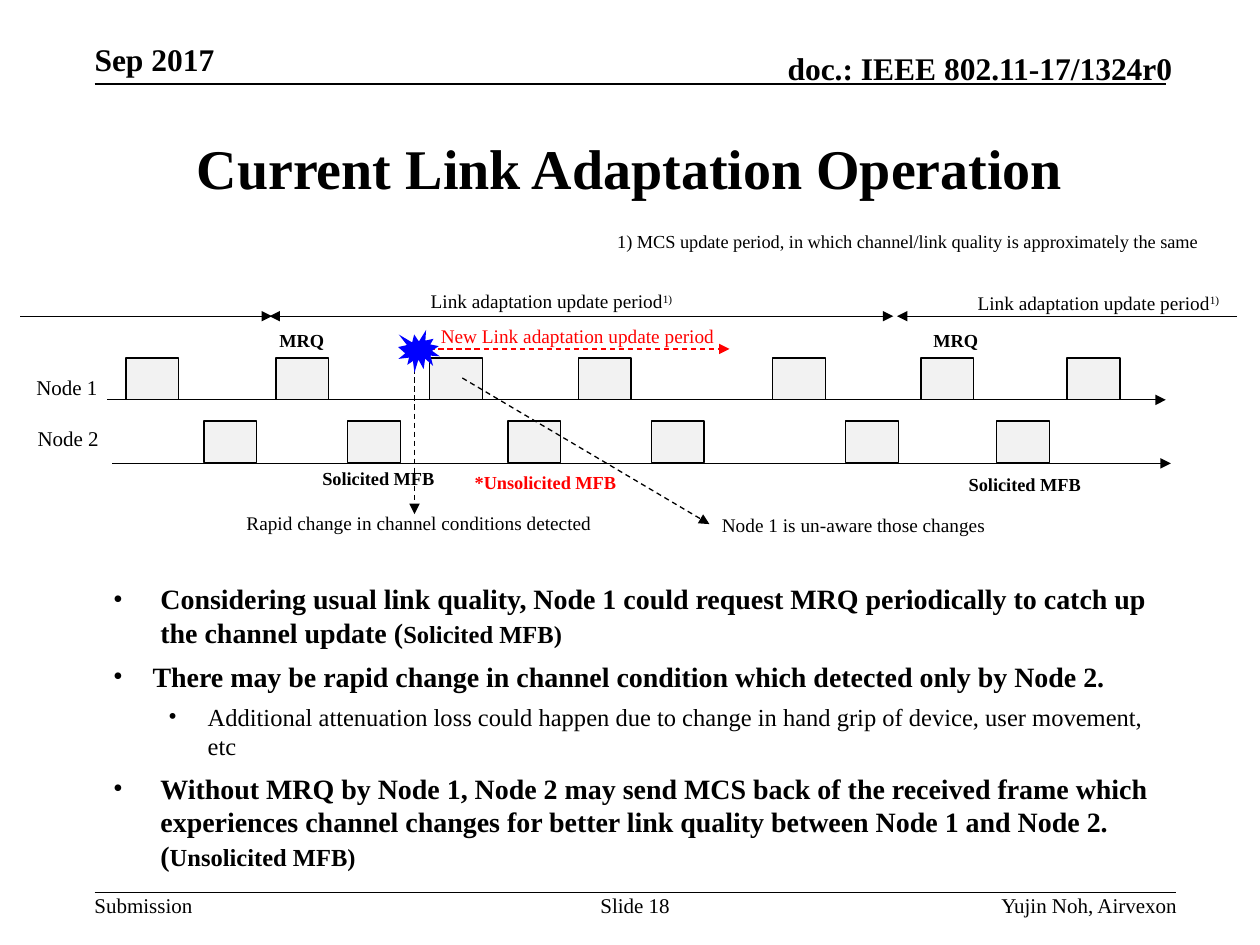
from lxml.etree import SubElement
from pptx import Presentation
from pptx.dml.color import RGBColor
from pptx.enum.dml import MSO_LINE
from pptx.enum.shapes import MSO_CONNECTOR, MSO_SHAPE
from pptx.enum.text import MSO_ANCHOR, PP_ALIGN
from pptx.oxml.ns import qn
from pptx.util import Pt

FONT = "Times New Roman"
COLORS = {
    "ink": "000000",
    "frame": "F2F2F2",
    "alert": "FF0000",
    "burst": "0000FF",
}
FRAME_WIDTH, FRAME_HEIGHT = 30.2, 24
NODE_1_FRAMES = (72, 157.7, 245.5, 330.5, 441.4, 526.3, 609.8)
NODE_2_FRAMES = (116.6, 198.7, 290.2, 372.2, 483.1, 569.5)
PERIOD = [("Link adaptation update period", {}), ("1)", {"raised": True})]

# Each point: level, left margin, hanging indent, space before, runs
POINTS = [
    (0, 27, 27, 6, [
        ("Considering usual link quality, Node 1 could request MRQ periodically "
         "to catch up the channel update (", {}),
        ("Solicited MFB)", {"size": 14})]),
    (0, 22.5, 27, 6, [
        ("There may be rapid change in channel condition which detected only "
         "by Node 2.", {})]),
    (1, 54, 22.5, 5, [
        ("Additional attenuation loss could happen due to change in hand grip "
         "of device, user movement, etc", {"size": 14, "bold": False})]),
    (0, 27, 27, 6, [
        ("Without MRQ by Node 1, Node 2 may send MCS back of the received frame "
         "which experiences channel changes for better link quality between "
         "Node 1 and Node 2. (", {}),
        ("Unsolicited MFB)", {"size": 14})]),
]


def rgb(name):
    return RGBColor.from_string(COLORS[name])


def write(paragraph, text, size=11, bold=False, color="ink", raised=False):
    run = paragraph.add_run()
    run.text = text
    run.font.name = FONT
    run.font.size = Pt(size)
    run.font.bold = bold
    run.font.color.rgb = rgb(color)
    if raised:
        run.font._element.set("baseline", "30000")


def add_text_box(slide, box, padding=(7.2, 3.6), wrap=True, anchor=MSO_ANCHOR.TOP):
    frame = slide.shapes.add_textbox(*map(Pt, box)).text_frame
    frame.word_wrap = wrap
    frame.vertical_anchor = anchor
    frame.margin_left = frame.margin_right = Pt(padding[0])
    frame.margin_top = frame.margin_bottom = Pt(padding[1])
    return frame


def add_label(slide, box, runs, align=PP_ALIGN.LEFT, wrap=False, **style):
    paragraph = add_text_box(slide, box, wrap=wrap).paragraphs[0]
    paragraph.alignment = align
    for text, changes in [(runs, {})] if isinstance(runs, str) else runs:
        write(paragraph, text, **{**style, **changes})


def add_margin_text(slide, box, text, align=PP_ALIGN.LEFT, anchor=MSO_ANCHOR.TOP, **style):
    """Header or footer text, set flush with its box."""
    frame = add_text_box(slide, box, padding=(0, 0), anchor=anchor)
    frame.paragraphs[0].alignment = align
    write(frame.paragraphs[0], text, **style)


def add_line(slide, start, end, color="ink", width=0.75, dashed=False, arrows=()):
    """arrows holds "headEnd" for the start and "tailEnd" for the end."""
    line = slide.shapes.add_connector(MSO_CONNECTOR.STRAIGHT, *map(Pt, start + end))
    line.line.color.rgb = rgb(color)
    line.line.width = Pt(width)
    if dashed:
        line.line.dash_style = MSO_LINE.DASH
    for arrow in arrows:
        SubElement(line.line._get_or_add_ln(), qn(f"a:{arrow}"), type="triangle")
    SubElement(line._element.spPr, qn("a:effectLst"))


def add_shape(slide, kind, box, fill, outlined=True):
    shape = slide.shapes.add_shape(kind, *map(Pt, box))
    shape.shadow.inherit = False
    shape.fill.solid()
    shape.fill.fore_color.rgb = rgb(fill)
    if outlined:
        shape.line.color.rgb = rgb("ink")
        shape.line.width = Pt(0.75)
    else:
        shape.line.fill.background()


def add_title(slide, text):
    title = slide.shapes.title
    title.left, title.top, title.width, title.height = map(Pt, (54, 54, 612, 83.5))
    title.text_frame.vertical_anchor = MSO_ANCHOR.MIDDLE
    paragraph = title.text_frame.paragraphs[0]
    paragraph.alignment = PP_ALIGN.CENTER
    write(paragraph, text, size=32, bold=True)


def add_header_and_footer(slide):
    add_line(slide, (54, 48.2), (666, 48.2), width=1)
    add_line(slide, (54, 510), (672, 510), width=1)
    heading = {"size": 18, "bold": True, "anchor": MSO_ANCHOR.BOTTOM}
    add_margin_text(slide, (54, 23, 276, 21.6), "Sep 2017", **heading)
    add_margin_text(slide, (394, 28, 276, 21.6), "doc.: IEEE 802.11-17/1324r0",
                    align=PP_ALIGN.RIGHT, **heading)
    add_margin_text(slide, (54, 510, 56, 14.4), "Submission", size=12)
    add_margin_text(slide, (342, 510, 41.8, 28.8), "Slide 18",
                    align=PP_ALIGN.CENTER, size=12)
    add_margin_text(slide, (422, 510, 250.5, 14.4), "Yujin Noh, Airvexon",
                    align=PP_ALIGN.RIGHT, size=12)


def add_timeline(slide, name, name_box, frames, frame_top, axis_left, axis_top):
    for left in frames:
        add_shape(slide, MSO_SHAPE.RECTANGLE,
                  (left, frame_top, FRAME_WIDTH, FRAME_HEIGHT), "frame")
    add_line(slide, (axis_left, axis_top), (axis_left + 605, axis_top), arrows=["tailEnd"])
    add_label(slide, name_box, name, size=12)


def add_update_periods(slide):
    add_line(slide, (11.5, 180.7), (155.5, 180.7), arrows=["tailEnd"])
    add_line(slide, (154, 180.7), (510.5, 180.7), arrows=["headEnd", "tailEnd"])
    add_line(slide, (707, 180.7), (512.6, 180.7), arrows=["tailEnd"])
    for left, top in ((239, 162), (551.5, 163)):
        add_label(slide, (left, top, 154, 20.6), PERIOD)
    add_label(slide, (345.6, 128.2, 356.4, 20.6),
              "1) MCS update period, in which channel/link quality is approximately the same",
              size=10.5, wrap=True)


def add_feedback_labels(slide):
    for left in (152.6, 526.3):
        add_label(slide, (left, 184.3, 40.3, 20.2), "MRQ", size=10.5, bold=True)
    for left, top in ((177.1, 263.5), (546.5, 267.1)):
        add_label(slide, (left, top, 79.2, 20.2), "Solicited MFB", size=10.5, bold=True)
    add_label(slide, (264.2, 265.7, 96.5, 20.2), "*Unsolicited MFB",
              size=10.5, bold=True, color="alert")


def add_channel_change(slide):
    add_line(slide, (236.9, 200.2), (236.9, 293.8), dashed=True, arrows=["tailEnd"])
    add_label(slide, (94.3, 288.7, 290.2, 20.6),
              "Rapid change in channel conditions detected",
              align=PP_ALIGN.CENTER, wrap=True)
    add_line(slide, (264.2, 216), (405.4, 299.5), dashed=True, arrows=["tailEnd"])
    add_label(slide, (405.4, 289.6, 208, 20.6), "Node 1 is un-aware those changes", wrap=True)
    add_line(slide, (239.8, 199.4), (416.9, 199.4), color="alert", dashed=True,
             arrows=["headEnd", "tailEnd"])
    add_label(slide, (244.8, 181.5, 177.8, 20.6), "New Link adaptation update period",
              color="alert")
    add_shape(slide, MSO_SHAPE.EXPLOSION1, (227.5, 188.6, 23.8, 24.5), "burst",
              outlined=False)


def add_points(slide):
    frame = add_text_box(slide, (57.6, 329, 612, 171.4))
    for index, (level, margin, hang, space, runs) in enumerate(POINTS):
        paragraph = frame.add_paragraph() if index else frame.paragraphs[0]
        paragraph.level = level
        paragraph.space_before = Pt(space)
        properties = paragraph._p.get_or_add_pPr()
        properties.set("marL", str(Pt(margin)))
        properties.set("indent", str(-Pt(hang)))
        SubElement(properties, qn("a:buFont"), typeface=FONT)
        SubElement(properties, qn("a:buChar"), char="•")
        for text, changes in runs:
            write(paragraph, text, **{"size": 16, "bold": True, **changes})


def main():
    presentation = Presentation()
    presentation.slide_width, presentation.slide_height = Pt(720), Pt(540)
    slide = presentation.slides.add_slide(presentation.slide_layouts[5])
    add_header_and_footer(slide)
    add_title(slide, "Current Link Adaptation Operation")
    add_points(slide)
    add_timeline(slide, "Node 1", (13.7, 210.4, 50.4, 21.6), NODE_1_FRAMES, 204.5, 61.2, 228.5)
    add_timeline(slide, "Node 2", (14.4, 239.8, 50.4, 21.6), NODE_2_FRAMES, 240.5, 64.1, 264.8)
    add_update_periods(slide)
    add_feedback_labels(slide)
    add_channel_change(slide)
    presentation.save("out.pptx")


if __name__ == "__main__":
    main()
